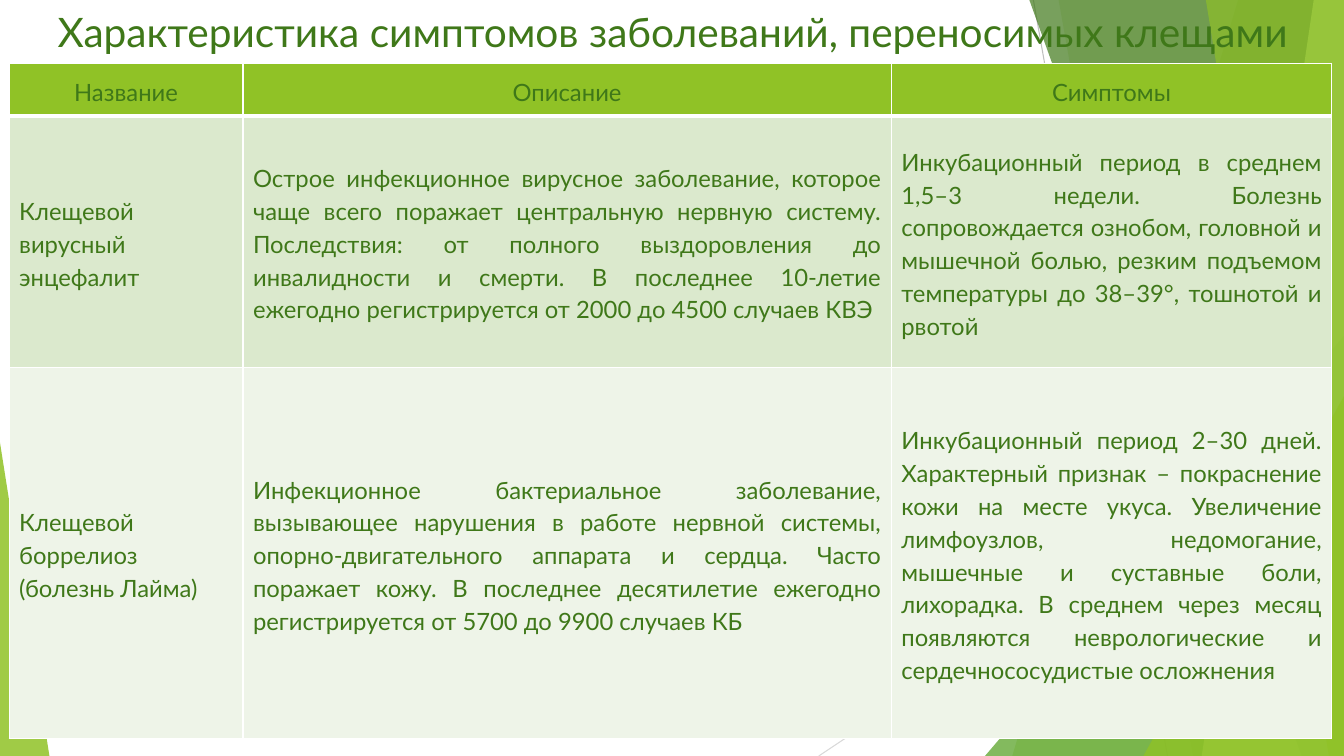
from lxml.etree import SubElement
from pptx import Presentation
from pptx.dml.color import RGBColor
from pptx.enum.shapes import MSO_CONNECTOR, MSO_SHAPE
from pptx.enum.text import MSO_ANCHOR, PP_ALIGN
from pptx.oxml.ns import qn
from pptx.util import Inches, Pt

W, H = Inches(13.33), Inches(7.5)
FONT = "Lato"
COLORS = {
    "text": "3F7819", "lime": "90C226", "leaf": "54A021", "pale": "C0E474",
    "forest": "3F7819", "white": "FFFFFF", "odd": "DBE9CD", "even": "EEF4E8",
    "ray": "BFBFBF", "soft_ray": "D9D9D9",
}
TITLE = "Характеристика симптомов заболеваний, переносимых клещами"
COLS = [17.4, 48.24, 32.78]
ROWS = [6.93, 33.33, 49.07]
DISEASES = [
    ["Название", "Описание", "Симптомы"],
    ["Клещевой вирусный энцефалит",
     "Острое инфекционное вирусное заболевание, которое чаще всего поражает "
     "центральную нервную систему. Последствия: от полного выздоровления до "
     "инвалидности и смерти. В последнее 10-летие ежегодно регистрируется "
     "от 2000 до 4500 случаев КВЭ",
     "Инкубационный период в среднем 1,5–3 недели. Болезнь сопровождается "
     "ознобом, головной и мышечной болью, резким подъемом температуры "
     "до 38–39°, тошнотой и рвотой"],
    ["Клещевой боррелиоз (болезнь Лайма)",
     "Инфекционное бактериальное заболевание, вызывающее нарушения в работе "
     "нервной системы, опорно-двигательного аппарата и сердца. Часто поражает "
     "кожу. В последнее десятилетие ежегодно регистрируется от 5700 до 9900 "
     "случаев КБ",
     "Инкубационный период 2–30 дней. Характерный признак – покраснение кожи "
     "на месте укуса. Увеличение лимфоузлов, недомогание, мышечные и суставные "
     "боли, лихорадка. В среднем через месяц появляются неврологические и "
     "сердечнососудистые осложнения"],
]


def px(share):
    """Turn a percentage of the slide width into a length."""
    return int(W * share / 100)


def py(share):
    """Turn a percentage of the slide height into a length."""
    return int(H * share / 100)


def rgb(name):
    """Look up a named colour."""
    return RGBColor.from_string(COLORS[name])


def paint(sp, color, alpha):
    """Give a shape a translucent fill without outline or shadow."""
    sp.shadow.inherit = False
    sp.line.fill.background()
    sp.fill.solid()
    sp.fill.fore_color.rgb = rgb(color)
    clr = sp.element.spPr.find(qn("a:solidFill"))[0]
    SubElement(clr, qn("a:alpha")).set("val", str(alpha * 1000))


def add_ray(s, x1, y1, x2, y2, color):
    """Draw a thin decorative line."""
    ray = s.shapes.add_connector(
        MSO_CONNECTOR.STRAIGHT, px(x1), py(y1), px(x2), py(y2))
    ray.line.color.rgb = rgb(color)
    ray.line.width = Pt(0.75)
    SubElement(ray.element.spPr, qn("a:effectLst"))


def add_band(s, top_x, bottom_x, color, alpha):
    """Fill the area from a slanted edge to the right side of the slide."""
    fb = s.shapes.build_freeform(px(top_x), 0)
    fb.add_line_segments([(W, 0), (W, H), (px(bottom_x), H)], close=True)
    paint(fb.convert_to_shape(), color, alpha)


def add_corner(s, left, right, top, apex, color, alpha):
    """Draw a right triangle standing on the bottom of the slide."""
    sp = s.shapes.add_shape(MSO_SHAPE.ISOSCELES_TRIANGLE, px(left), py(top),
                            px(right - left), py(100 - top))
    sp.adjustments[0] = apex
    paint(sp, color, alpha)


def add_text(tf, text, size, align):
    """Write one formatted run into the first paragraph."""
    p = tf.paragraphs[0]
    p.alignment = align
    r = p.add_run()
    r.text = text
    r.font.name = FONT
    r.font.size = Pt(size)
    r.font.color.rgb = rgb("text")
    return p


def add_title(s):
    """Place the title placeholder above the decoration."""
    sp = s.shapes.title
    sp.left, sp.top, sp.width, sp.height = px(3.53), 0, px(95.5), py(8.4)
    tf = sp.text_frame
    tf.word_wrap = True
    tf.vertical_anchor = MSO_ANCHOR.MIDDLE
    add_text(tf, TITLE, 29, PP_ALIGN.LEFT)
    sp.element.getparent().append(sp.element)


def set_borders(cell, widths):
    """Draw white cell borders of the given widths in points."""
    tcPr = cell._tc.get_or_add_tcPr()
    for side, width in widths.items():
        ln = SubElement(tcPr, qn(f"a:ln{side}"), w=str(Pt(width)))
        fill = SubElement(ln, qn("a:solidFill"))
        SubElement(fill, qn("a:srgbClr"), val=COLORS["white"])


def add_disease_table(s):
    """Build the table of diseases and their symptoms."""
    table = s.shapes.add_table(len(ROWS), len(COLS), px(0.68), py(8.4),
                               px(sum(COLS)), py(sum(ROWS))).table
    for col, share in zip(table.columns, COLS):
        col.width = px(share)
    for i, (row, share) in enumerate(zip(table.rows, ROWS)):
        row.height = py(share)
        for cell, text in zip(row.cells, DISEASES[i]):
            set_borders(cell, {"L": 1, "R": 1, "T": 3 if i == 1 else 1,
                               "B": 3 if i == 0 else 1})
            cell.fill.solid()
            cell.fill.fore_color.rgb = rgb(("lime", "odd", "even")[i])
            cell.vertical_anchor = MSO_ANCHOR.MIDDLE
            align = PP_ALIGN.JUSTIFY if i else PP_ALIGN.CENTER
            add_text(cell.text_frame, text, 17, align).line_spacing = 1.15


def main():
    """Build the slide and save it."""
    prs = Presentation()
    prs.slide_width, prs.slide_height = W, H
    s = prs.slides.add_slide(prs.slide_layouts[5])
    add_ray(s, 76.89, 0, 86.87, 100, "ray")
    add_ray(s, 100, 53.73, 60.92, 100, "soft_ray")
    add_band(s, 92.12, 75.32, "lime", 30)
    add_band(s, 78.77, 88.75, "lime", 20)
    add_corner(s, 73.29, 100, 44.4, 1, "leaf", 72)
    add_band(s, 76.59, 96.85, "forest", 70)
    add_band(s, 97.75, 89.42, "pale", 70)
    add_band(s, 89.72, 98.87, "lime", 65)
    add_corner(s, 85.07, 100, 52.4, 1, "lime", 80)
    add_corner(s, 0, 3.68, 58.53, 0, "lime", 85)
    add_title(s)
    add_disease_table(s)
    prs.save("out.pptx")


if __name__ == "__main__":
    main()
